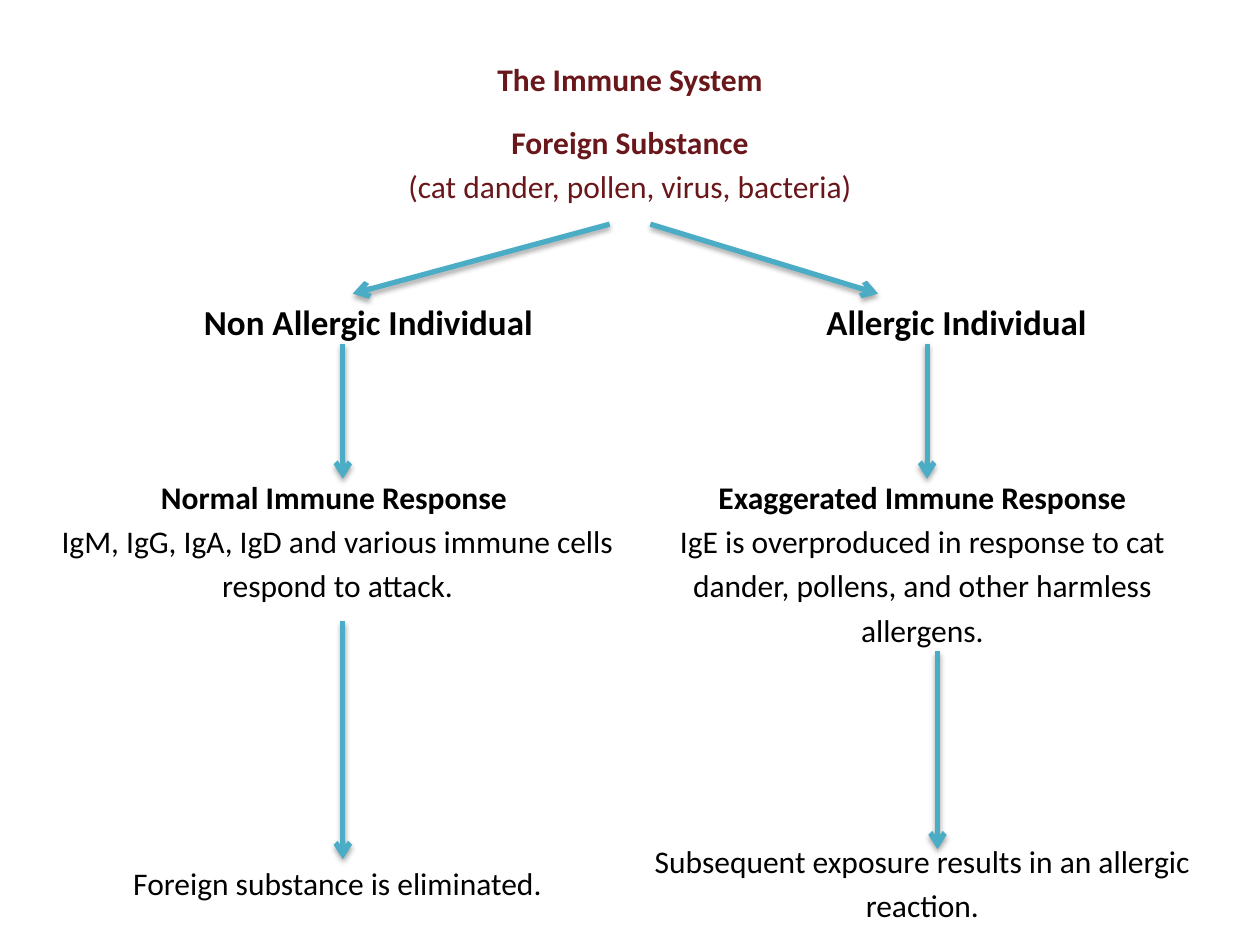
from lxml.etree import SubElement
from pptx import Presentation
from pptx.dml.color import RGBColor as Color
from pptx.enum.shapes import MSO_CONNECTOR as Connector
from pptx.enum.text import MSO_ANCHOR as Anchor, PP_ALIGN as Align
from pptx.oxml.ns import qn
from pptx.util import Cm, Pt

COLORS = {"heading": "69171A", "body": "000000", "arrow": "4BACC6", "shadow": "000000"}
FONT = "Calibri"

# Content: each line is (text, bold, space after in points)
SUBSTANCE = [
    ("The Immune System", True, 11),
    ("Foreign Substance", True, 0),
    ("(cat dander, pollen, virus, bacteria)", False, 0),
]
INDIVIDUALS = [("\tNon Allergic Individual\tAllergic Individual", True, 10)]
NORMAL = [
    ("Normal Immune Response ", True, 0),
    ("IgM, IgG, IgA, IgD and various immune cells respond to attack.", False, 0),
]
EXAGGERATED = [
    ("Exaggerated Immune Response", True, 0),
    ("IgE is overproduced in response to cat dander, pollens, "
     "and other harmless allergens.", False, 0),
]
ELIMINATED = [("Foreign substance is eliminated.", False, 0)]
REACTION = [("Subsequent exposure results in an allergic reaction.", False, 0)]

# Layout in centimetres
TABLE_LEFT, TABLE_TOP = 1.09, 1.12
COLUMNS = [11.43, 0.36, 11.43]
ROWS = [4.85, 3.58, 5.89, 0.99, 2.69]
MERGES = [((0, 0), (0, 2)), ((1, 0), (1, 2)), ((2, 1), (4, 1))]
TAB_STOPS = [3.02, 15.57]

# Row, column, lines, size, colour, alignment, anchor
CELLS = [
    (0, 0, SUBSTANCE, 18, "heading", Align.CENTER, Anchor.TOP),
    (1, 0, INDIVIDUALS, 20, "body", Align.LEFT, Anchor.TOP),
    (2, 0, NORMAL, 18, "body", Align.CENTER, Anchor.TOP),
    (2, 2, EXAGGERATED, 18, "body", Align.CENTER, Anchor.TOP),
    (4, 0, ELIMINATED, 18, "body", Align.CENTER, Anchor.MIDDLE),
    (4, 2, REACTION, 18, "body", Align.CENTER, Anchor.MIDDLE),
]

# Start x, start y, end x, end y
ARROWS = [
    (6.91, 12.52, 6.91, 17.32),
    (6.91, 6.93, 6.91, 9.65),
    (18.69, 6.93, 18.69, 9.65),
    (18.9, 13.13, 18.9, 17.12),
    (12.29, 4.52, 7.11, 5.92),
    (13.11, 4.52, 17.7, 5.92),
]


def fill_cell(cell, lines, size, color, align, anchor):
    cell.vertical_anchor = anchor
    frame = cell.text_frame
    for index, (text, bold, space_after) in enumerate(lines):
        para = frame.add_paragraph() if index else frame.paragraphs[0]
        para.alignment = align
        para.line_spacing = 1.15
        para.space_after = Pt(space_after)
        if "\t" in text:
            tabs = SubElement(para._p.get_or_add_pPr(), qn("a:tabLst"))
            for stop in TAB_STOPS:
                SubElement(tabs, qn("a:tab"), pos=str(Cm(stop)), algn="l")
        span = para.add_run()
        span.text = text
        span.font.name = FONT
        span.font.size = Pt(size)
        span.font.bold = bold
        span.font.color.rgb = Color.from_string(COLORS[color])


def add_arrow(page, points):
    arrow = page.shapes.add_connector(Connector.STRAIGHT, *map(Cm, points))
    arrow.line.color.rgb = Color.from_string(COLORS["arrow"])
    arrow.line.width = Pt(3)
    SubElement(arrow.line._get_or_add_ln(), qn("a:tailEnd"), type="arrow")
    effects = SubElement(arrow._element.spPr, qn("a:effectLst"))
    shadow = SubElement(effects, qn("a:outerShdw"), blurRad=str(Pt(3.1)),
                        dist=str(Pt(1.8)), dir="5400000", rotWithShape="0")
    shade = SubElement(shadow, qn("a:srgbClr"), val=COLORS["shadow"])
    SubElement(shade, qn("a:alpha"), val="35000")


def main():
    deck = Presentation()
    deck.slide_width, deck.slide_height = Cm(25.4), Cm(19.05)
    page = deck.slides.add_slide(deck.slide_layouts[6])

    # Table that carries all the text
    table = page.shapes.add_table(
        len(ROWS), len(COLUMNS), Cm(TABLE_LEFT), Cm(TABLE_TOP),
        Cm(sum(COLUMNS)), Cm(sum(ROWS))).table
    table.first_row = table.horz_banding = False
    for column, width in zip(table.columns, COLUMNS):
        column.width = Cm(width)
    for row, height in zip(table.rows, ROWS):
        row.height = Cm(height)
    for cell in table.iter_cells():
        cell.fill.background()
        cell.margin_left = cell.margin_right = 0
        cell.margin_top = cell.margin_bottom = 0
    for first, last in MERGES:
        table.cell(*first).merge(table.cell(*last))
    for row, column, *content in CELLS:
        fill_cell(table.cell(row, column), *content)

    # Arrows between the stages
    for points in ARROWS:
        add_arrow(page, points)

    deck.save("out.pptx")


if __name__ == "__main__":
    main()
